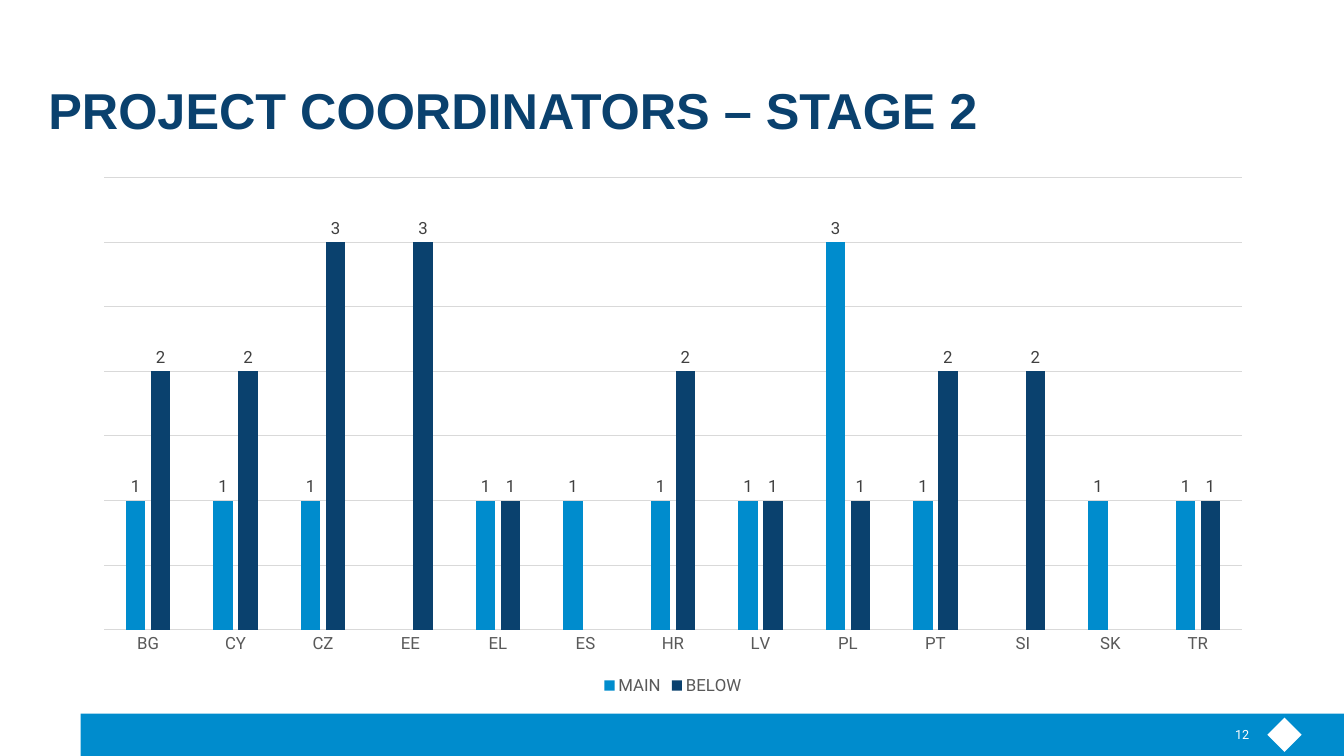
"""Builds the slide on project coordinators by country, stage 2."""
from pptx import Presentation, util as u
from pptx.chart.data import CategoryChartData
from pptx.dml.color import RGBColor
from pptx.enum import chart as ch, shapes, text

HEADING = "PROJECT COORDINATORS – STAGE 2"
PAGE = "12"
COUNTRIES = ["BG", "CY", "CZ", "EE", "EL", "ES", "HR", "LV", "PL", "PT", "SI", "SK", "TR"]
COORDINATORS = {
    "MAIN": ("sky", [1, 1, 1, None, 1, 1, 1, 1, 3, 1, None, 1, 1]),
    "BELOW": ("navy", [2, 2, 3, 3, 1, None, 2, 1, 1, 2, 2, None, 1]),
}
THEME = {
    "sky": "008CCD", "navy": "0A416E", "white": "FFFFFF", "grid": "D9D9D9",
    "axis": "595959", "label": "404040",
    "heading_font": "Arial", "body_font": "Roboto",
    "heading_size": 36, "chart_size": 12, "page_size": 9,
}


def rgb(key):
    return RGBColor.from_string(THEME[key])


def box(left, top, width, height):
    return [u.Inches(n) for n in (left, top, width, height)]


def style_font(font, color, size, face="body_font", bold=False):
    font.name = THEME[face]
    font.size = u.Pt(THEME[size])
    font.bold = bold
    font.color.rgb = rgb(color)


def style_line(line):
    line.color.rgb = rgb("grid")
    line.width = u.Pt(0.75)


def add_text(slide, words, at, anchor, align, spacing=1.0, **font):
    frame = slide.shapes.add_textbox(*box(*at)).text_frame
    frame.word_wrap = True
    frame.vertical_anchor = anchor
    frame.margin_left = frame.margin_top = frame.margin_right = frame.margin_bottom = 0
    line = frame.paragraphs[0]
    line.alignment = align
    line.line_spacing = spacing
    run = line.add_run()
    run.text = words
    style_font(run.font, **font)


def add_block(slide, preset, at, color):
    block = slide.shapes.add_shape(preset, *box(*at))
    block.shadow.inherit = False
    block.fill.solid()
    block.fill.fore_color.rgb = rgb(color)
    block.line.fill.background()


def add_country_chart(slide, at):
    data = CategoryChartData(number_format="General")
    data.categories = COUNTRIES
    for name, (_, counts) in COORDINATORS.items():
        data.add_series(name, counts)
    chart = slide.shapes.add_chart(ch.XL_CHART_TYPE.COLUMN_CLUSTERED, *box(*at), data).chart
    style_font(chart.font, "axis", "chart_size")
    chart.has_title = False
    chart.has_legend = True
    chart.legend.position = ch.XL_LEGEND_POSITION.BOTTOM
    chart.legend.include_in_layout = False
    style_font(chart.legend.font, "axis", "chart_size")

    countries = chart.category_axis
    countries.major_tick_mark = ch.XL_TICK_MARK.NONE
    style_font(countries.tick_labels.font, "axis", "chart_size")
    style_line(countries.format.line)

    counts = chart.value_axis
    counts.visible = False
    counts.minimum_scale, counts.maximum_scale, counts.major_unit = 0, 3.5, 0.5
    counts.has_major_gridlines = True
    style_line(counts.major_gridlines.format.line)

    plot = chart.plots[0]
    plot.gap_width, plot.overlap = 219, -27
    plot.vary_by_categories = False
    for series, (color, _) in zip(plot.series, COORDINATORS.values()):
        series.format.fill.solid()
        series.format.fill.fore_color.rgb = rgb(color)
        series.invert_if_negative = False
        labels = series.data_labels
        labels.show_value = True
        labels.position = ch.XL_LABEL_POSITION.OUTSIDE_END
        style_font(labels.font, "label", "chart_size")


def main():
    deck = Presentation()
    deck.slide_width, deck.slide_height = u.Inches(13.33), u.Inches(7.5)
    slide = deck.slides.add_slide(deck.slide_layouts[6])
    add_block(slide, shapes.MSO_SHAPE.RECTANGLE, (0.8, 7.08, 12.53, 0.42), "sky")
    add_block(slide, shapes.MSO_SHAPE.DIAMOND, (12.57, 7.12, 0.34, 0.34), "white")
    add_country_chart(slide, (0.8, 1.66, 11.75, 5.28))
    add_text(slide, HEADING, (0.48, 0.88, 12.06, 0.51), text.MSO_ANCHOR.BOTTOM,
             text.PP_ALIGN.LEFT, spacing=0.85, color="navy", size="heading_size",
             face="heading_font", bold=True)
    add_text(slide, PAGE, (11.82, 7.21, 0.57, 0.15), text.MSO_ANCHOR.MIDDLE,
             text.PP_ALIGN.RIGHT, color="white", size="page_size")
    deck.save("out.pptx")


if __name__ == "__main__":
    main()
